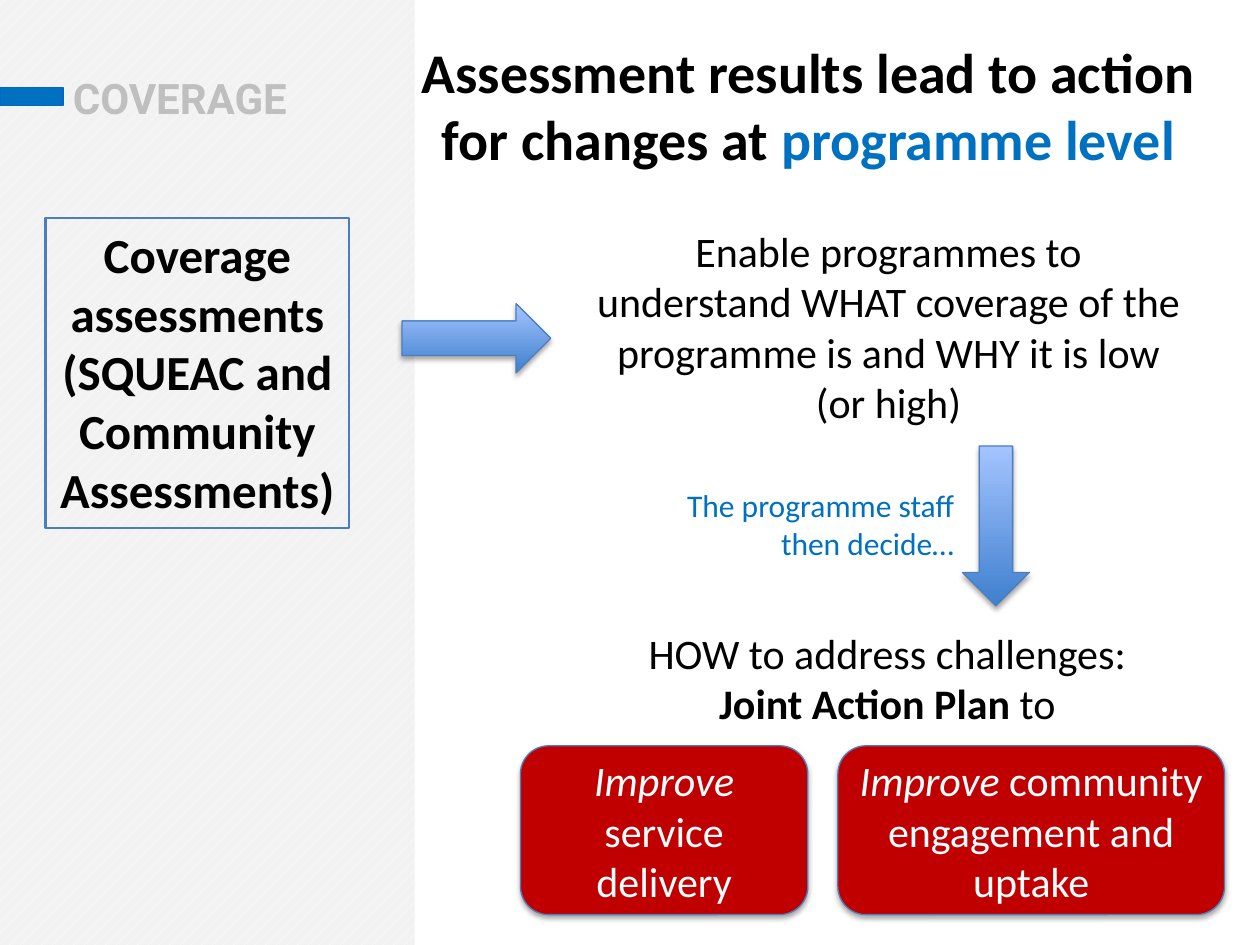
from lxml import etree
from pptx import Presentation
from pptx.dml.color import RGBColor
from pptx.enum.dml import MSO_PATTERN
from pptx.enum.shapes import MSO_SHAPE
from pptx.enum.text import MSO_ANCHOR, PP_ALIGN
from pptx.oxml.ns import qn
from pptx.util import Pt

RECT, ROUNDED = MSO_SHAPE.RECTANGLE, MSO_SHAPE.ROUNDED_RECTANGLE
RIGHT_ARROW, DOWN_ARROW = MSO_SHAPE.RIGHT_ARROW, MSO_SHAPE.DOWN_ARROW
LEFT, CENTER, RIGHT = PP_ALIGN.LEFT, PP_ALIGN.CENTER, PP_ALIGN.RIGHT
TOP, MIDDLE = MSO_ANCHOR.TOP, MSO_ANCHOR.MIDDLE
STRIPES = MSO_PATTERN.DASHED_UPWARD_DIAGONAL

BLACK = RGBColor(0x00, 0x00, 0x00)
WHITE = RGBColor(0xFF, 0xFF, 0xFF)
PALE_GREY = RGBColor(0xF2, 0xF2, 0xF2)
GREY = RGBColor(0xBF, 0xBF, 0xBF)
BLUE = RGBColor(0x00, 0x70, 0xC0)
TAB_EDGE = RGBColor(0x00, 0x66, 0xCC)
EDGE = RGBColor(0x4B, 0x7E, 0xBC)
ARROW_DARK = RGBColor(0x3F, 0x80, 0xCE)
ARROW_LIGHT = RGBColor(0xA4, 0xC4, 0xFF)
RED = RGBColor(0xC0, 0x00, 0x00)

SECTION = [[("COVERAGE", "b", GREY)]]
TITLE = [[("Assessment results lead to action for changes at ", "b", BLACK),
          ("programme level", "b", BLUE)]]
ASSESSMENTS = [[("Coverage assessments (SQUEAC and Community Assessments)", "b", BLACK)]]
FINDINGS = [[("Enable programmes to understand WHAT coverage of the programme is "
              "and WHY it is low (or high)", "", BLACK)]]
DECISION = [[("The programme staff then decide…", "", BLUE)]]
PLAN = [[("HOW to address challenges:", "", BLACK)],
        [("Joint Action Plan ", "b", BLACK), ("to", "", BLACK)]]

TEXTS = [
    (SECTION, (34.5, 42.5, 217.5, 32), 24, "Roboto", LEFT),
    (TITLE, (224, 18, 476, 85), 32, "Calibri", CENTER),
    (FINDINGS, (332, 125.3, 351.4, 124), 24, "Calibri", CENTER),
    (PLAN, (362, 355, 290, 65.5), 24, "Calibri", CENTER),
    (DECISION, (382.3, 274.3, 170, 51), 18, "Calibri", RIGHT),
]
ARROWS = [(RIGHT_ARROW, (229.7, 173.5, 85, 39.6)),
          (DOWN_ARROW, (550, 254.9, 38.2, 91.4))]
ACTIONS = [(" service delivery", 297.4, 164.2),
           (" community engagement and uptake", 478.8, 221)]
ACTION_TOP, ACTION_HEIGHT = 426.2, 96.5


def write(shape, paragraphs, size, font, align, anchor=TOP):
    frame = shape.text_frame
    frame.word_wrap = True
    frame.vertical_anchor = anchor
    for index, runs in enumerate(paragraphs):
        paragraph = frame.add_paragraph() if index else frame.paragraphs[0]
        paragraph.alignment = align
        for words, style, color in runs:
            run = paragraph.add_run()
            run.text = words
            run.font.name = font
            run.font.size = Pt(size)
            run.font.bold = "b" in style
            run.font.italic = "i" in style
            run.font.color.rgb = color


def add_shape(slide, kind, box, fill=None, edge=None, width=0.75):
    shape = slide.shapes.add_shape(kind, *map(Pt, box))
    shape.shadow.inherit = False
    if fill is None:
        shape.fill.background()
    else:
        shape.fill.solid()
        shape.fill.fore_color.rgb = fill
    if edge is None:
        shape.line.fill.background()
    else:
        shape.line.color.rgb = edge
        shape.line.width = Pt(width)
    return shape


def add_shadow(shape):
    effects = shape._element.spPr.find(qn("a:effectLst"))
    shadow = etree.SubElement(effects, qn("a:outerShdw"), blurRad=str(Pt(3.1)),
                              dist=str(Pt(1.8)), dir="5400000", rotWithShape="0")
    color = etree.SubElement(shadow, qn("a:srgbClr"), val=str(BLACK))
    etree.SubElement(color, qn("a:alpha"), val="35000")


def main():
    deck = Presentation()
    deck.slide_width, deck.slide_height = Pt(720), Pt(540)
    slide = deck.slides.add_slide(deck.slide_layouts[6])

    sidebar = add_shape(slide, RECT, (-3, 0, 240, 540))
    sidebar.fill.patterned()
    sidebar.fill.pattern = STRIPES
    sidebar.fill.fore_color.rgb = WHITE
    sidebar.fill.back_color.rgb = PALE_GREY
    add_shape(slide, RECT, (0, 50.2, 36, 10), BLUE, TAB_EDGE)

    for paragraphs, box, size, font, align in TEXTS:
        label = slide.shapes.add_textbox(*map(Pt, box))
        write(label, paragraphs, size, font, align)
        if paragraphs is SECTION:
            label.text_frame.paragraphs[0].line_spacing = Pt(24)

    assessments = add_shape(slide, RECT, (26, 124.6, 173.5, 177), None, EDGE, 1.25)
    write(assessments, ASSESSMENTS, 28, "Calibri", CENTER)

    for kind, box in ARROWS:
        arrow = add_shape(slide, kind, box, ARROW_DARK, EDGE)
        arrow.fill.gradient()
        arrow.fill.gradient_angle = 90
        for stop, color in zip(arrow.fill.gradient_stops, (ARROW_DARK, ARROW_LIGHT)):
            stop.color.rgb = color
        add_shadow(arrow)

    for goal, left, width in ACTIONS:
        action = add_shape(slide, ROUNDED, (left, ACTION_TOP, width, ACTION_HEIGHT), RED, EDGE)
        add_shadow(action)
        write(action, [[("Improve", "i", WHITE), (goal, "", WHITE)]],
              24, "Calibri", CENTER, MIDDLE)

    deck.save("out.pptx")


if __name__ == "__main__":
    main()
